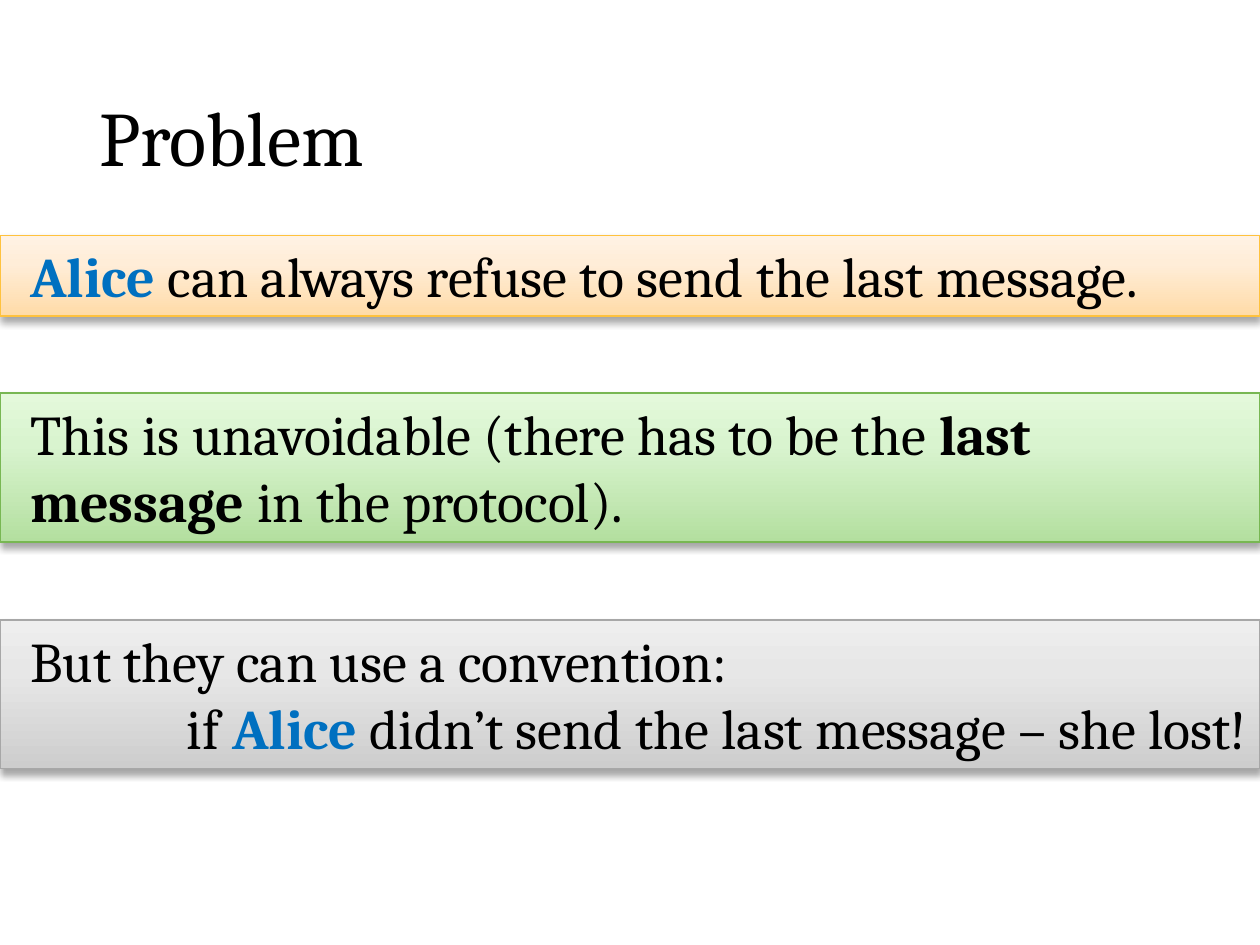
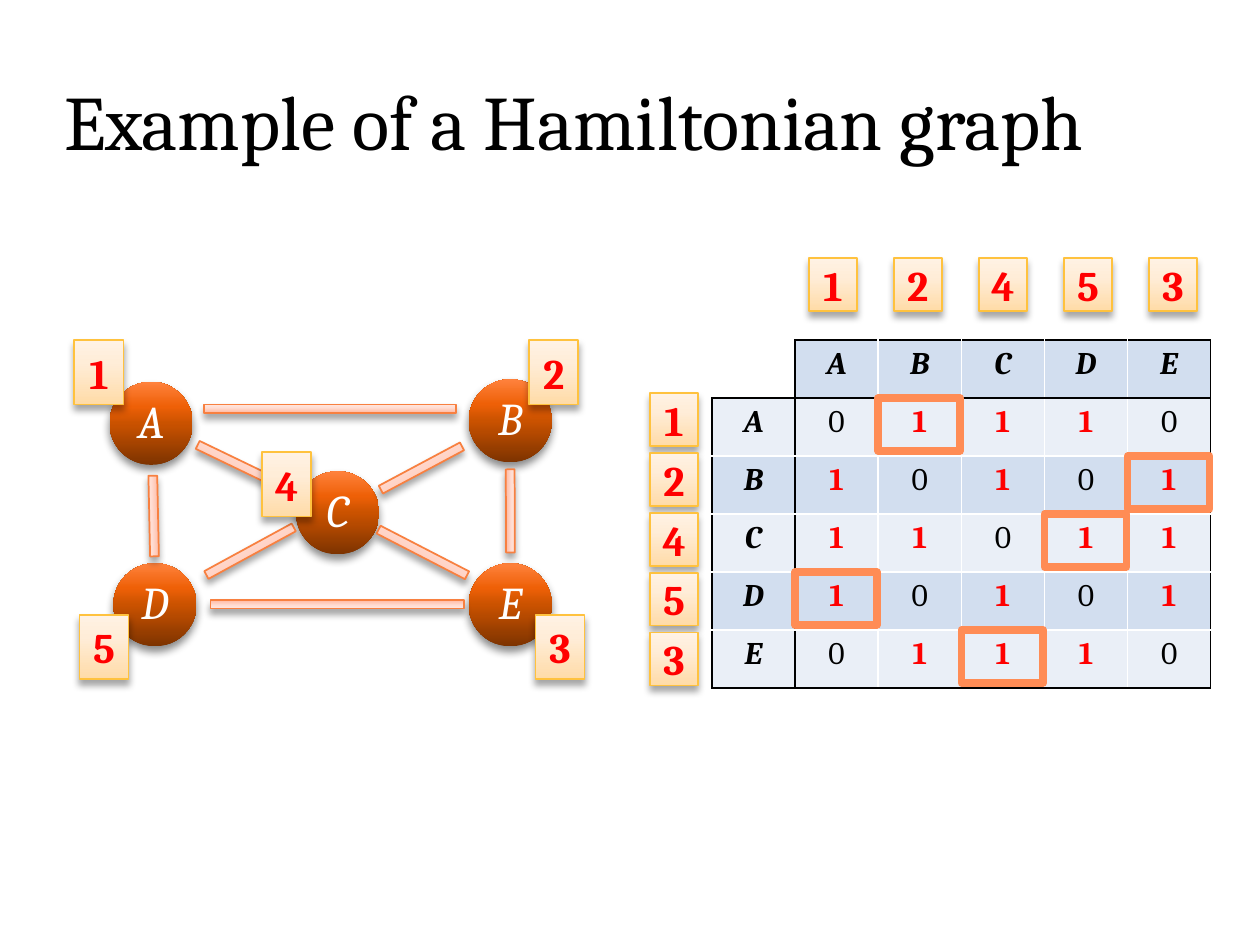
from pptx import Presentation
from pptx.dml.color import RGBColor as RGB
from pptx.enum.shapes import MSO_SHAPE as Kind
from pptx.enum.text import MSO_ANCHOR as Anchor, MSO_AUTO_SIZE as Fit, PP_ALIGN as Align
from pptx.oxml.ns import qn
from pptx.util import Inches, Pt
from lxml.etree import SubElement as Sub

FONT = "Cambria"
BLACK = RGB(0x00, 0x00, 0x00)
WHITE = RGB(0xFF, 0xFF, 0xFF)
RED = RGB(0xFF, 0x00, 0x00)
BLUE = RGB(0x00, 0x70, 0xC0)
ROW_DARK = RGB(0xD2, 0xDE, 0xEF)
ROW_LIGHT = RGB(0xEA, 0xEF, 0xF7)
FRAME = RGB(0xFF, 0x8C, 0x55)
GOLD = RGB(0xFF, 0xC2, 0x3E)
GREEN = RGB(0x78, 0xB7, 0x53)
GRAY = RGB(0xA7, 0xA7, 0xA7)
CORAL = RGB(0xF8, 0x80, 0x40)

GOLD_FADE = [(0, RGB(0xFF, 0xDB, 0xA7)), (65, RGB(0xFF, 0xED, 0xD8)), (100, RGB(0xFF, 0xF2, 0xE4))]
GREEN_FADE = [(0, RGB(0xB3, 0xDF, 0x9F)), (65, RGB(0xD9, 0xF4, 0xCF)), (100, RGB(0xE4, 0xF9, 0xDB))]
GRAY_FADE = [(0, RGB(0xCD, 0xCD, 0xCD)), (65, RGB(0xE7, 0xE7, 0xE7)), (100, RGB(0xEE, 0xEE, 0xEE))]
CORAL_FADE = [(0, RGB(0xFF, 0xB7, 0x9F)), (65, RGB(0xFF, 0xDD, 0xD3)), (100, RGB(0xFF, 0xE7, 0xE0))]
NODE_FADE = [(0, RGB(0x7D, 0x33, 0x00)), (50, RGB(0xCA, 0x52, 0x00)),
             (70, RGB(0xEE, 0x60, 0x07)), (100, RGB(0xFF, 0x82, 0x3D))]

NAMES = "ABCDE"
LINKS = ["01110", "10101", "11011", "10101", "01110"]
ORDER = "12453"
TOUR = [1, 4, 3, 0, 2]
GRID_X, GRID_Y, COL, ROW = 5.65, 2.7, 0.66, 0.46
NODES = {"C": (2.35, 3.74), "B": (3.72, 3.01), "E": (3.72, 4.47),
         "D": (0.9, 4.47), "A": (0.87, 3.03)}
EDGES = [(2.98, 3.68, 0.73, 331.9), (3.72, 4.02, 0.66, 89.8), (1.67, 4.76, 2.01, 180),
         (0.9, 4.06, 0.64, 268.8), (1.53, 3.67, 0.8, 25.7), (1.62, 3.21, 2, 0),
         (1.59, 4.34, 0.79, 331.4), (2.96, 4.35, 0.79, 27.3)]
TAGS = {"1": (0.59, 2.7), "2": (4.2, 2.7), "3": (4.25, 4.88),
        "4": (2.08, 3.59), "5": (0.63, 4.88)}


def box(x, y, w, h):
    return [Inches(v) for v in (x, y, w, h)]


def put(para, text, size, color=BLACK, bold=False, italic=False):
    run = para.add_run()
    run.text = text
    font = run.font
    font.name, font.size = FONT, Pt(size)
    font.bold, font.italic = bold, italic
    font.color.rgb = color


def tint(parent, color):
    return Sub(parent, qn("a:srgbClr"), val=str(color))


def fade(shape, stops):
    shape.fill.gradient()
    shape.fill.gradient_angle = 90
    group = shape._element.spPr.find(".//" + qn("a:gsLst"))
    for stop in list(group):
        group.remove(stop)
    for pos, color in stops:
        tint(Sub(group, qn("a:gs"), pos=str(pos * 1000)), color)


def shade(shape, alpha, blur):
    shape.shadow.inherit = False
    effect = shape._element.spPr.find(qn("a:effectLst"))
    outer = Sub(effect, qn("a:outerShdw"), blurRad=str(Pt(blur)), dist=str(Pt(3)),
                dir="5400000", rotWithShape="0")
    Sub(tint(outer, BLACK), qn("a:alpha"), val=str(alpha * 1000))


def panel(slide, place, stops, edge):
    shape = slide.shapes.add_shape(Kind.RECTANGLE, *box(*place))
    fade(shape, stops)
    shape.line.color.rgb = edge
    shape.line.width = Pt(1)
    shade(shape, 35, 4)
    return shape


def title(slide, x, y, text):
    frame = slide.shapes.add_textbox(*box(x, y, 8.62, 1.45)).text_frame
    frame.word_wrap = True
    frame.vertical_anchor = Anchor.MIDDLE
    para = frame.paragraphs[0]
    para.line_spacing = 0.9
    put(para, text, 44)


def band(slide, y, h, stops, edge, lines):
    frame = panel(slide, (0, y, 10, h), stops, edge).text_frame
    frame.word_wrap = True
    frame.auto_size = Fit.SHAPE_TO_FIT_TEXT
    frame.vertical_anchor = Anchor.TOP
    frame.margin_left = Inches(0.24)
    for i, (align, runs) in enumerate(lines):
        para = frame.add_paragraph() if i else frame.paragraphs[0]
        para.alignment = align
        for text, color, bold in runs:
            put(para, text, 32, color, bold)


def label(shape, text, size, color, **style):
    frame = shape.text_frame
    frame.vertical_anchor = Anchor.MIDDLE
    para = frame.paragraphs[0]
    para.alignment = Align.CENTER
    put(para, text, size, color, **style)
    return frame


def badge(slide, x, y, w, h, text):
    label(panel(slide, (x, y, w, h), GOLD_FADE, GOLD), text, 24, RED, bold=True)


def node(slide, x, y, name):
    shape = slide.shapes.add_shape(Kind.OVAL, *box(x, y, 0.66, 0.66))
    fade(shape, NODE_FADE)
    shape.line.fill.background()
    shade(shape, 45, 5)
    frame = label(shape, name, 26, WHITE, italic=True)
    frame.margin_left = frame.margin_right = Inches(0.04)
    frame.margin_top = frame.margin_bottom = Inches(0.04)
    frame.paragraphs[0].line_spacing = 0.9


def ring(slide, row, col):
    place = box(GRID_X + COL * (col + 1), GRID_Y + ROW * (row + 1), 0.65, 0.42)
    shape = slide.shapes.add_shape(Kind.RECTANGLE, *place)
    shape.fill.background()
    shape.line.color.rgb = FRAME
    shape.line.width = Pt(4.33)
    shape.shadow.inherit = False


def rule(cell, side, color):
    line = Sub(cell._tc.get_or_add_tcPr(), qn("a:" + side), w=str(Pt(1)))
    tint(Sub(line, qn("a:solidFill")), color)


def fill_cell(cell, row, col):
    corner = row == col == 0
    dark = {"lnL": col <= 1 and not corner, "lnR": col in (0, 5),
            "lnT": row <= 1 and not corner, "lnB": row in (0, 5)}
    for side, black in dark.items():
        rule(cell, side, BLACK if black else WHITE)
    cell.fill.solid()
    cell.fill.fore_color.rgb = WHITE if corner else ROW_LIGHT if row % 2 else ROW_DARK
    if corner:
        return
    para = cell.text_frame.paragraphs[0]
    para.alignment = Align.CENTER
    if row and col:
        text = LINKS[row - 1][col - 1]
        on = text == "1"
        put(para, text, 18, RED if on else BLACK, bold=on)
    else:
        put(para, NAMES[max(row, col) - 1], 18, bold=True, italic=True)


def matrix(slide):
    size = len(NAMES) + 1
    place = box(GRID_X, GRID_Y, COL * size, ROW * size)
    table = slide.shapes.add_table(size, size, *place).table
    table.first_row = table.horz_banding = False
    for i in range(size):
        table.columns[i].width = Inches(COL)
        table.rows[i].height = Inches(ROW)
        for j in range(size):
            fill_cell(table.cell(i, j), i, j)


def problem(slide):
    title(slide, 0.69, 0.4, "Problem")
    alice = ("Alice", BLUE, True)
    band(slide, 1.87, 0.64, GOLD_FADE, GOLD, [
        (Align.LEFT, [alice, (" can always refuse to send the last message.", BLACK, False)])])
    band(slide, 3.12, 1.18, GREEN_FADE, GREEN, [
        (Align.LEFT, [("This is unavoidable (there has to be the ", BLACK, False),
                      ("last message", BLACK, True),
                      (" in the protocol).", BLACK, False)])])
    band(slide, 4.92, 1.18, GRAY_FADE, GRAY, [
        (Align.LEFT, [("But they can use a convention:", BLACK, False)]),
        (Align.RIGHT, [("if ", BLACK, False), alice,
                       (" didn’t send the last message – she lost!", BLACK, False)])])


def graph(slide):
    title(slide, 0.41, 0.27, "Example of a Hamiltonian graph")
    matrix(slide)
    for name, (x, y) in NODES.items():
        node(slide, x, y, name)
    for x, y, length, turn in EDGES:
        panel(slide, (x, y, length, 0.07), CORAL_FADE, CORAL).rotation = turn
    for text, (x, y) in TAGS.items():
        badge(slide, x, y, 0.39, 0.51, text)
    for i, text in enumerate(ORDER):
        badge(slide, 6.42 + i * 2.7 / 4, 2.05, 0.38, 0.42, text)
        badge(slide, 5.16, 3.12 + i * 1.9 / 4, 0.38, 0.42, text)
    for row, col in enumerate(TOUR):
        ring(slide, row, col)


def main():
    deck = Presentation()
    deck.slide_width, deck.slide_height = Inches(10), Inches(7.5)
    for draw in (problem, graph):
        draw(deck.slides.add_slide(deck.slide_layouts[6]))
    deck.save("out.pptx")


if __name__ == "__main__":
    main()
